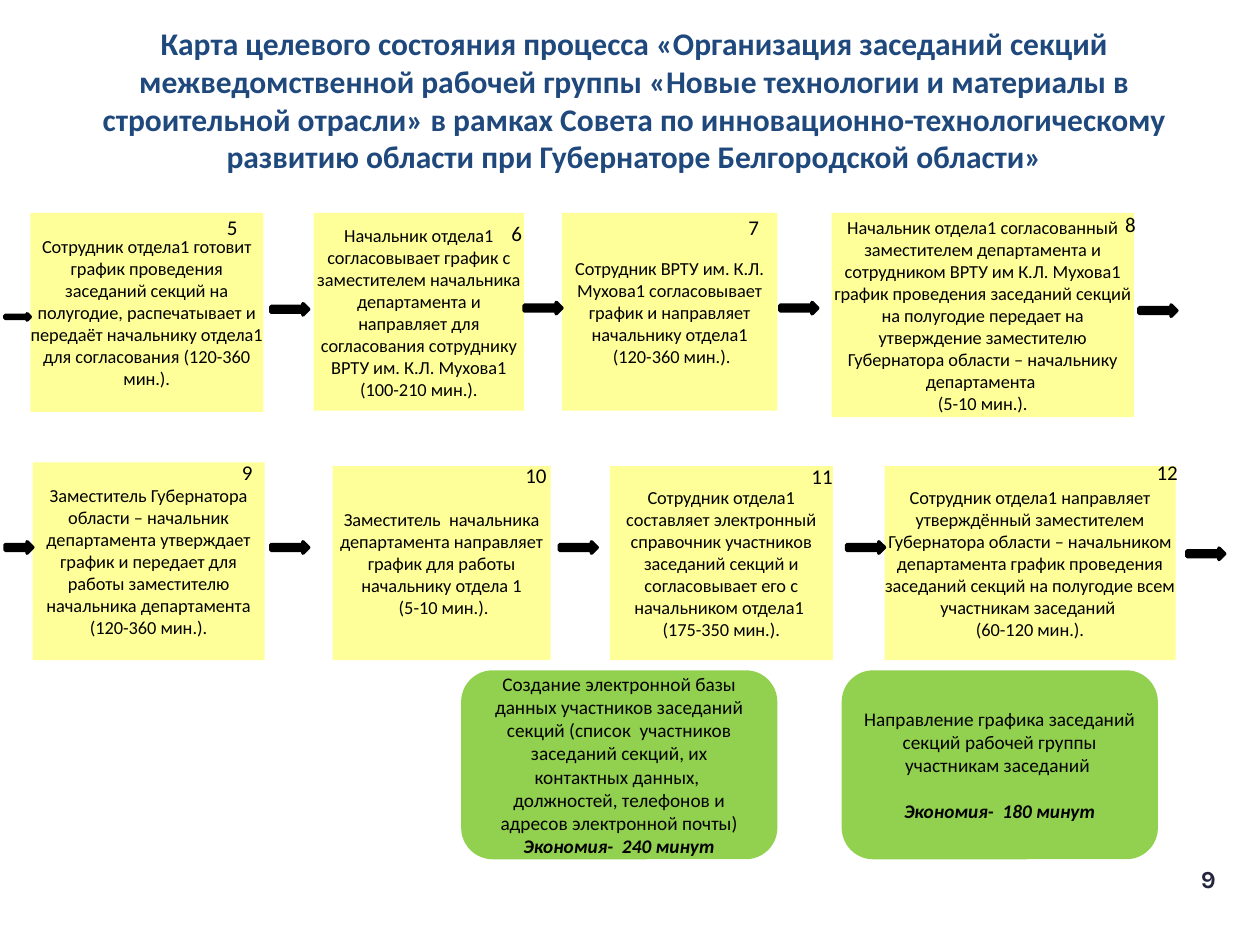
from dataclasses import dataclass
from typing import Any

from pptx import Presentation
from pptx.dml.color import RGBColor
from pptx.enum.shapes import MSO_SHAPE
from pptx.enum.text import MSO_ANCHOR, MSO_AUTO_SIZE, PP_ALIGN
from pptx.util import Emu, Pt

RECT, ROUND, ARROW = MSO_SHAPE.RECTANGLE, MSO_SHAPE.ROUNDED_RECTANGLE, MSO_SHAPE.RIGHT_ARROW
LEFT, CENTER = PP_ALIGN.LEFT, PP_ALIGN.CENTER
TOP, MIDDLE = MSO_ANCHOR.TOP, MSO_ANCHOR.MIDDLE
FIXED = MSO_AUTO_SIZE.NONE

SCALE = 9144  # EMU in one px, 100 px to the inch
BLACK, YELLOW, GREEN, BLUE = "000000", "FFFF99", "92D050", "4F81BD"
NAVY, INK = "1F497D", "23263C"

Area = tuple[int, int, int, int]
FLAT: Area = (0, 0, 0, 0)
INSET: Area = (10, 5, 10, 5)

STEP = {"size": Pt(10.5), "name": "Calibri"}
MARK = {"size": Pt(12), "name": "Calibri"}
NOTE = {"size": Pt(11), "name": "Calibri"}
GAIN = {**NOTE, "bold": True, "italic": True}
HEAD = {"size": Pt(18), "name": "Calibri", "bold": True}
PAGE = {"size": Pt(14), "name": "Karla", "bold": True}


@dataclass
class Step:
    num: str
    area: Area
    mark: tuple[int, int]
    lines: list[str]


@dataclass
class Gain:
    left: int
    text: str
    saved: str
    gap: float = 0


TITLE = (
    "Карта целевого состояния процесса «Организация заседаний секций "
    "межведомственной рабочей группы «Новые технологии и материалы в "
    "строительной отрасли» в рамках Совета по инновационно-технологическому "
    "развитию области при Губернаторе Белгородской области»"
)

STEPS = [
    Step("5", (24, 169, 185, 158), (180, 170), [
        "Сотрудник отдела1 готовит график проведения заседаний секций на "
        "полугодие, распечатывает и передаёт начальнику отдела1 для "
        "согласования (120-360 мин.)."]),
    Step("6", (249, 169, 167, 157), (406, 175), [
        "Начальник отдела1 согласовывает график с заместителем начальника "
        "департамента и направляет для согласования сотруднику ВРТУ им. "
        "К.Л. Мухова1 (100-210 мин.)."]),
    Step("7", (446, 169, 171, 157), (594, 170), [
        "Сотрудник ВРТУ им. К.Л. Мухова1 согласовывает график и направляет "
        "начальнику отдела1", " (120-360 мин.)."]),
    Step("8", (660, 169, 240, 162), (893, 168), [
        "Начальник отдела1 согласованный заместителем департамента и "
        "сотрудником ВРТУ им К.Л. Мухова1 график проведения заседаний секций "
        "на полугодие передает на утверждение заместителю Губернатора "
        "области – начальнику департамента ", "(5-10 мин.)."]),
    Step("9", (26, 367, 184, 157), (192, 365), [
        "Заместитель Губернатора области – начальник департамента утверждает "
        "график и передает для работы заместителю начальника департамента "
        "(120-360 мин.)."]),
    Step("10", (264, 370, 173, 154), (417, 367), [
        "Заместитель  начальника департамента направляет график для работы "
        "начальнику отдела 1", " (5-10 мин.)."]),
    Step("11", (484, 370, 177, 154), (644, 368), [
        "Сотрудник отдела1 составляет электронный справочник участников "
        "заседаний секций и согласовывает его с начальником отдела1 ",
        "(175-350 мин.)."]),
    Step("12", (702, 370, 231, 154), (918, 365), [
        "Сотрудник отдела1 направляет утверждённый заместителем Губернатора "
        "области – начальником департамента график проведения заседаний "
        "секций на полугодие всем участникам заседаний ", "(60-120 мин.)."]),
]

ARROWS: list[Area] = [
    (4, 249, 20, 5), (215, 241, 30, 9), (416, 240, 30, 9), (619, 240, 30, 9), (904, 242, 30, 9),
    (4, 430, 22, 9), (215, 430, 30, 9), (444, 430, 30, 9), (672, 430, 30, 9), (942, 435, 30, 9),
]

GAINS = [
    Gain(366, "Создание электронной базы данных участников заседаний секций "
         "(список  участников заседаний секций, их контактных данных,  "
         "должностей, телефонов и адресов электронной почты)",
         "Экономия-  240 минут"),
    Gain(668, "Направление графика заседаний секций рабочей группы участникам "
         "заседаний ", "Экономия-  180 минут", 13.4),
]


def px(num: int) -> Emu:
    return Emu(num * SCALE)


def color(code: str) -> RGBColor:
    return RGBColor.from_string(code)


def apply(item: Any, form: dict[str, Any]) -> None:
    for key, val in form.items():
        setattr(item, key, val)


def frame(shape: Any, inset: Area, anchor: Any) -> Any:
    left, top, right, low = map(px, inset)
    body = shape.text_frame
    apply(body, {"word_wrap": True, "auto_size": FIXED, "vertical_anchor": anchor,
                 "margin_left": left, "margin_top": top,
                 "margin_right": right, "margin_bottom": low})
    return body


def write(para: Any, text: str, form: dict[str, Any], ink: str = BLACK, align: Any = CENTER) -> None:
    para.alignment = align
    run = para.add_run()
    run.text = text
    apply(run.font, form)
    run.font.color.rgb = color(ink)


def block(slide: Any, kind: Any, area: Area, fill: str) -> Any:
    shape = slide.shapes.add_shape(kind, *map(px, area))
    shape.shadow.inherit = False
    shape.fill.solid()
    shape.fill.fore_color.rgb = color(fill)
    shape.line.fill.background()
    return shape


def label(slide: Any, area: Area, text: str, form: dict[str, Any],
          inset: Area, ink: str, align: Any) -> None:
    box = slide.shapes.add_textbox(*map(px, area))
    write(frame(box, inset, TOP).paragraphs[0], text, form, ink, align)


def step(slide: Any, item: Step) -> None:
    body = frame(block(slide, RECT, item.area, YELLOW), FLAT, MIDDLE)
    for num, line in enumerate(item.lines):
        write(body.add_paragraph() if num else body.paragraphs[0], line, STEP)


def arrow(slide: Any, area: Area, fill: str) -> None:
    shape = block(slide, ARROW, area, fill)
    shape.line.color.rgb = color(BLACK)
    shape.line.width = Pt(2)


def gain(slide: Any, item: Gain) -> None:
    body = frame(block(slide, ROUND, (item.left, 532, 251, 150), GREEN), INSET, MIDDLE)
    write(body.paragraphs[0], item.text, NOTE)
    last = body.add_paragraph()
    last.space_before = Pt(item.gap)
    write(last, item.saved, GAIN)


def main() -> None:
    deck = Presentation()
    deck.slide_width, deck.slide_height = px(1000), px(750)
    slide = deck.slides.add_slide(deck.slide_layouts[5])

    # Title, raised by a deeper bottom inset
    title = slide.shapes.title
    apply(title, dict(zip(("left", "top", "width", "height"), map(px, (35, 28, 937, 135)))))
    write(frame(title, (10, 5, 10, 38), MIDDLE).paragraphs[0], TITLE, HEAD, NAVY)

    # Process steps, arrows and step numbers
    for item in STEPS:
        step(slide, item)
    for num, area in enumerate(ARROWS):
        arrow(slide, area, BLACK if num else BLUE)
    for item in STEPS:
        label(slide, (*item.mark, 24, 20), item.num, MARK, FLAT, BLACK, LEFT)

    # Savings and page number
    for item in GAINS:
        gain(slide, item)
    label(slide, (934, 681, 50, 41), "9", PAGE, INSET, INK, CENTER)

    deck.save("out.pptx")


if __name__ == "__main__":
    main()
